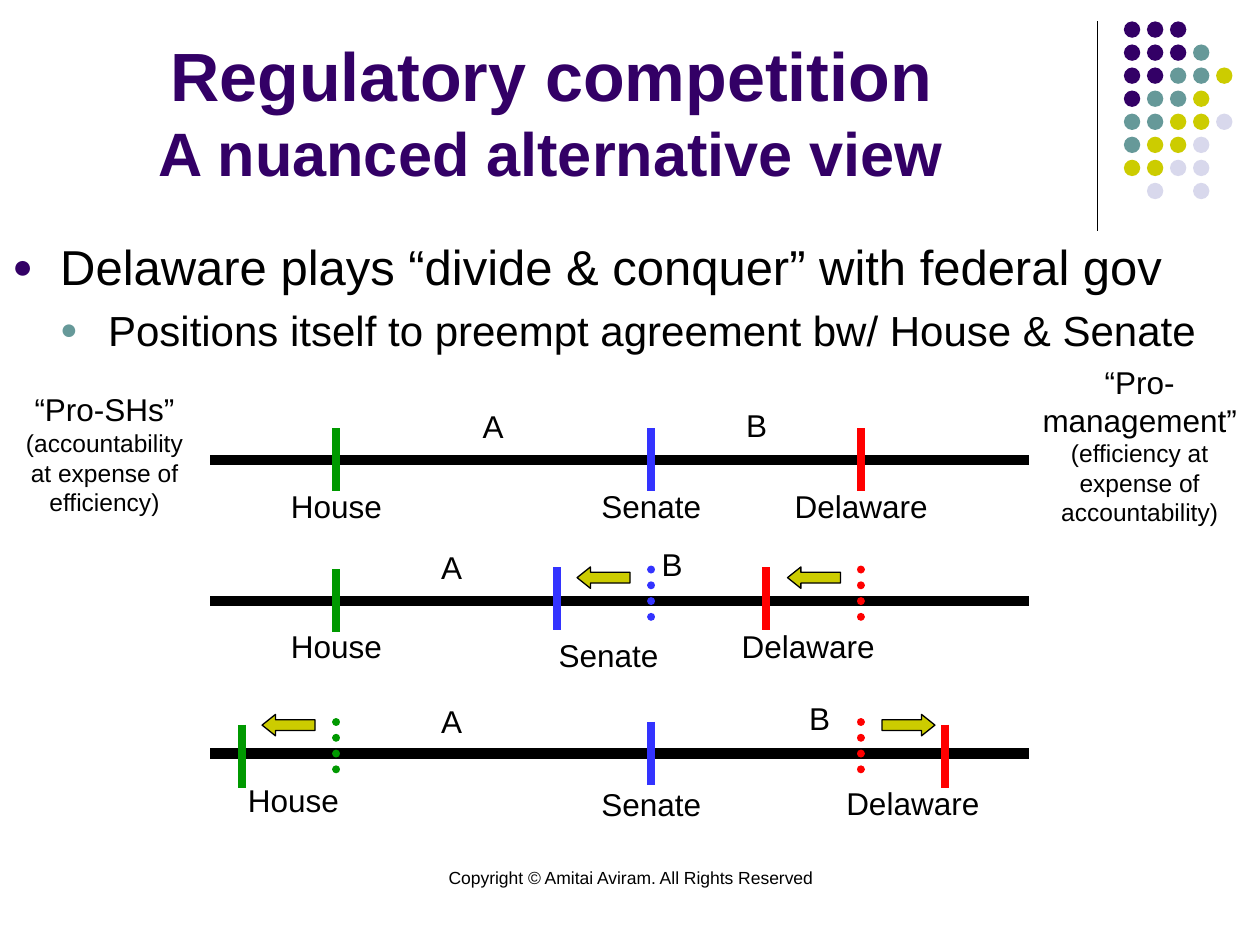
from lxml.etree import SubElement
from pptx import Presentation
from pptx.dml.color import RGBColor
from pptx.enum.dml import MSO_LINE
from pptx.enum.shapes import MSO_CONNECTOR, MSO_SHAPE
from pptx.enum.text import MSO_ANCHOR, PP_ALIGN
from pptx.oxml.ns import qn
from pptx.util import Inches, Pt

BLACK = RGBColor(0x00, 0x00, 0x00)
PURPLE = RGBColor(0x33, 0x00, 0x66)
TEAL = RGBColor(0x66, 0x99, 0x99)
YELLOW = RGBColor(0xCC, 0xCC, 0x00)
LAVENDER = RGBColor(0xD8, 0xD8, 0xEC)
GREEN = RGBColor(0x00, 0x99, 0x00)
BLUE = RGBColor(0x33, 0x33, 0xFF)
RED = RGBColor(0xFF, 0x00, 0x00)

DOT_COLORS = {"P": PURPLE, "T": TEAL, "Y": YELLOW, "L": LAVENDER}
DOT_ROWS = ["PPP", "PPPT", "PPTTY", "PTTY", "TTYYL", "TYYL", "YYLL", " L L"]
DOT_PITCH = 0.183

AXIS_LEFT, AXIS_RIGHT = 1.67, 8.17
MARK_HEIGHT = 0.5
# Starting position of each player on the axis
PLAYERS = {"House": (2.67, GREEN), "Senate": (5.17, BLUE), "Delaware": (6.83, RED)}
LABEL_WIDTHS = {"House": 1, "Senate": 1, "Delaware": 1.33, "A": 0.67, "B": 0.67}

# Axis height, labels as (left, top), moves as player: (new x, mark top, arrow left, arrow top)
SCENARIOS = [
    (3.65,
     {"House": (2.17, 3.82), "Senate": (4.67, 3.82), "Delaware": (6.17, 3.82),
      "A": (3.58, 3.18), "B": (5.67, 3.17)},
     {}),
    (4.77,
     {"House": (2.17, 4.93), "Senate": (4.33, 5), "Delaware": (5.75, 4.93),
      "A": (3.25, 4.3), "B": (5, 4.28)},
     {"Senate": (4.42, 4.5, 4.58, 4.5), "Delaware": (6.08, 4.5, 6.25, 4.5)}),
    (5.98,
     {"House": (1.83, 6.15), "Senate": (4.67, 6.18), "Delaware": (6.58, 6.17),
      "A": (3.25, 5.52), "B": (6.17, 5.5)},
     {"House": (1.92, 5.75, 2.08, 5.67), "Delaware": (7.5, 5.75, 7, 5.67)}),
]


def add_span(para, text, size=18, color=BLACK, bold=False):
    span = para.add_run()
    span.text = text
    span.font.name = "Arial"
    span.font.size = Pt(size)
    span.font.bold = bold
    span.font.color.rgb = color


def add_box(slide, left, top, width, height, anchor=MSO_ANCHOR.TOP):
    box = slide.shapes.add_textbox(Inches(left), Inches(top), Inches(width), Inches(height))
    box.text_frame.word_wrap = True
    box.text_frame.vertical_anchor = anchor
    return box.text_frame


def add_text(slide, left, top, width, height, *spans, **text_format):
    """Centred text; each span is (text, size)."""
    para = add_box(slide, left, top, width, height).paragraphs[0]
    para.alignment = PP_ALIGN.CENTER
    for text, size in spans:
        add_span(para, text, size=size, **text_format)


def add_title(slide):
    para = add_box(slide, 0, 0.13, 8.75, 1.42, MSO_ANCHOR.BOTTOM).paragraphs[0]
    para.alignment = PP_ALIGN.CENTER
    add_span(para, "Regulatory competition", size=39, color=PURPLE, bold=True)
    para.add_line_break()
    add_span(para, "A nuanced alternative view", size=35, color=PURPLE, bold=True)


def set_bullet(para, level, color):
    properties = para._p.get_or_add_pPr()
    properties.set("marL", str(Inches(0.38 * (level + 1))))
    properties.set("indent", str(Inches(-0.38)))
    bullet_color = SubElement(properties, qn("a:buClr"))
    SubElement(bullet_color, qn("a:srgbClr"), val=str(color))
    SubElement(properties, qn("a:buSzPct"), val="70000")
    SubElement(properties, qn("a:buFont"), typeface="Arial")
    SubElement(properties, qn("a:buChar"), char="●")


def add_body(slide):
    frame = add_box(slide, 0, 1.83, 10, 5.08)
    items = [
        ("Delaware plays “divide & conquer” with federal gov", 28, PURPLE),
        ("Positions itself to preempt agreement bw/ House & Senate", 24, TEAL),
    ]
    for level, (text, size, color) in enumerate(items):
        para = frame.add_paragraph() if level else frame.paragraphs[0]
        para.level = level
        para.space_before = Pt(size * 0.2)
        set_bullet(para, level, color)
        add_span(para, text, size=size)


def add_line(slide, x1, y1, x2, y2, color=BLACK, width=6, dotted=False):
    line = slide.shapes.add_connector(
        MSO_CONNECTOR.STRAIGHT, Inches(x1), Inches(y1), Inches(x2), Inches(y2))
    line.line.color.rgb = color
    line.line.width = Pt(width)
    if dotted:
        line.line.dash_style = MSO_LINE.ROUND_DOT
        line.line._ln.set("cap", "rnd")
    SubElement(line._element.spPr, qn("a:effectLst"))


def add_mark(slide, x, top, color, dotted=False):
    add_line(slide, x, top, x, top + MARK_HEIGHT, color, 4.5, dotted)


def add_filled(slide, kind, left, top, width, height, color):
    shape = slide.shapes.add_shape(
        kind, Inches(left), Inches(top), Inches(width), Inches(height))
    shape.shadow.inherit = False
    shape.fill.solid()
    shape.fill.fore_color.rgb = color
    shape.line.fill.background()
    return shape


def add_arrow(slide, kind, left, top):
    arrow = add_filled(slide, kind, left, top, 0.42, 0.17, YELLOW)
    arrow.adjustments[0] = 0.5
    arrow.adjustments[1] = 0.625
    arrow.line.color.rgb = BLACK
    arrow.line.width = Pt(0.75)


def add_dot_pattern(slide):
    add_line(slide, 8.71, 0.17, 8.71, 1.83, width=0.75)
    for row, letters in enumerate(DOT_ROWS):
        for column, letter in enumerate(letters):
            if letter in DOT_COLORS:
                add_filled(slide, MSO_SHAPE.OVAL, 8.92 + column * DOT_PITCH,
                           0.17 + row * DOT_PITCH, 0.13, 0.13, DOT_COLORS[letter])


def add_scenario(slide, axis, labels, moves):
    """One axis, with a dotted mark and an arrow for each player who moves."""
    add_line(slide, AXIS_LEFT, axis, AXIS_RIGHT, axis)
    for player, (start, color) in PLAYERS.items():
        add_mark(slide, start, axis - MARK_HEIGHT / 2, color, dotted=player in moves)
    for text, (left, top) in labels.items():
        add_text(slide, left, top, LABEL_WIDTHS[text], 0.4, (text, 18))
    for player, (x, mark_top, arrow_left, arrow_top) in moves.items():
        start, color = PLAYERS[player]
        add_mark(slide, x, mark_top, color)
        kind = MSO_SHAPE.LEFT_ARROW if x < start else MSO_SHAPE.RIGHT_ARROW
        add_arrow(slide, kind, arrow_left, arrow_top)


def main():
    deck = Presentation()
    deck.slide_width, deck.slide_height = Inches(10), Inches(7.5)
    page = deck.slides.add_slide(deck.slide_layouts[6])
    add_dot_pattern(page)
    add_text(page, 3.42, 6.83, 3.17, 0.5,
             ("Copyright © Amitai Aviram. All Rights Reserved", 10))
    add_title(page)
    add_body(page)
    add_text(page, 0.08, 3.05, 1.5, 1.1, ("“Pro-SHs” ", 18),
             ("(accountability at expense of efficiency)", 14))
    add_text(page, 8.17, 2.83, 1.75, 1.4, ("“Pro-management” ", 18),
             ("(efficiency at expense of accountability)", 14))
    for scenario in SCENARIOS:
        add_scenario(page, *scenario)
    deck.save("out.pptx")


if __name__ == "__main__":
    main()
